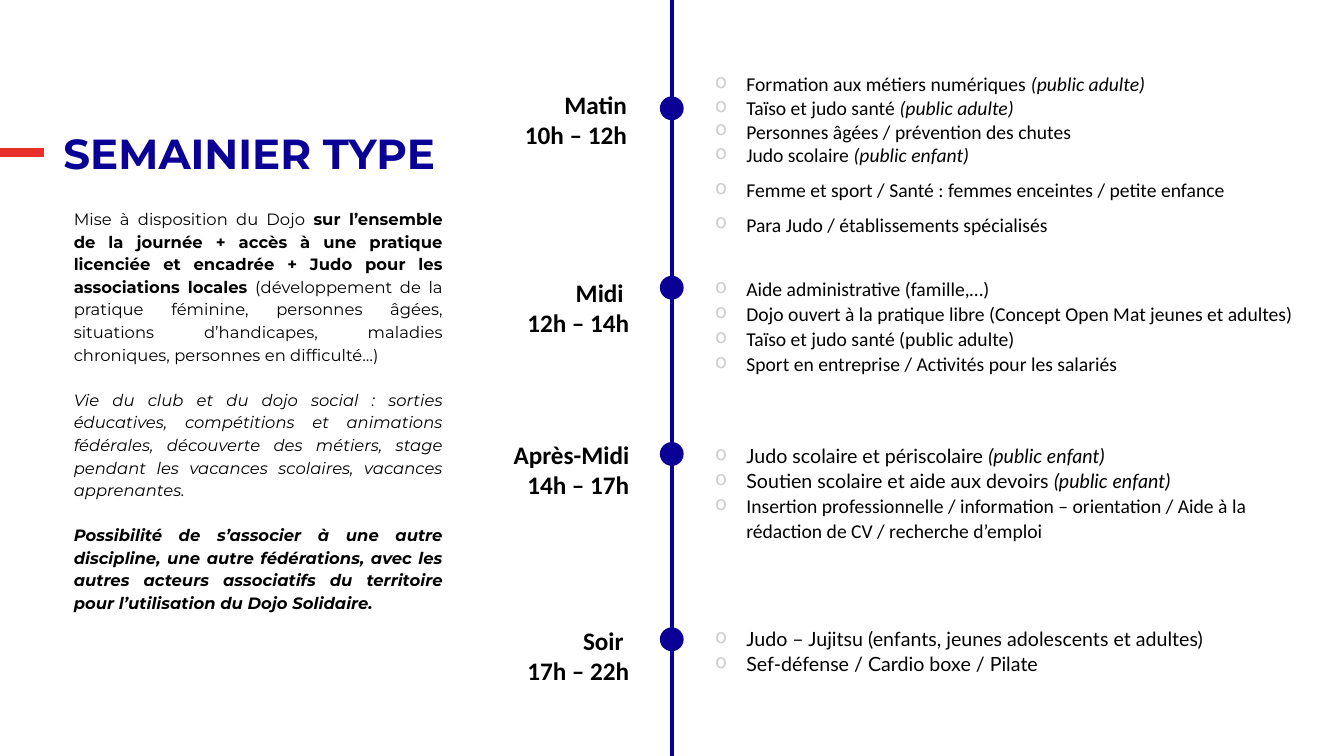
"""Build the weekly schedule slide of the dojo."""
from lxml import etree
from pptx import Presentation
from pptx import util as u
from pptx.dml.color import RGBColor
from pptx.enum import shapes, text
from pptx.oxml.ns import qn

COLORS = {"navy": "0A0096", "red": "E7302A", "ink": "000000", "bullet": "D0CECE"}
AXIS_X = 16.93
DOT_SIZE = 0.6
ADULTS = ("(public adulte)", "i")
CHILDREN = ("(public enfant)", "i")

MOMENTS = [
    {"dot": 2.73, "label": ["Matin", "10h – 12h"], "label_at": (16.05, 2.13),
     "list_top": 1.7, "width": 17.17, "spacing": 1.0, "fonts": ["Calibri"] * 6,
     "gaps": [0, 0, 0, 8, 8, 8],
     "activities": [
         [("Formation aux métiers numériques ", ""), ADULTS],
         [("Taïso et judo santé ", ""), ADULTS],
         [("Personnes âgées / prévention des chutes", "")],
         [("Judo scolaire ", ""), CHILDREN],
         [("Femme et sport / Santé : femmes enceintes / petite enfance", "")],
         [("Para Judo / établissements spécialisés", "")]]},
    {"dot": 7.25, "label": ["Midi ", "12h – 14h"], "label_at": (16.11, 6.86),
     "list_top": 6.81, "width": 17.17, "spacing": 1.07, "fonts": ["Calibri"] * 4,
     "gaps": [0] * 4,
     "activities": [
         [("Aide administrative (famille,…)", "")],
         [("Dojo ouvert à la pratique libre (Concept Open Mat jeunes et adultes)", "")],
         [("Taïso et judo santé (public adulte)", "")],
         [("Sport en entreprise / Activités pour les salariés", "")]]},
    {"dot": 11.44, "label": ["Après-Midi", "14h – 17h"], "label_at": (16.11, 10.95),
     "list_top": 11.02, "width": 15.65, "spacing": 1.07,
     "fonts": ["Lato", "Lato", "Calibri"], "gaps": [0] * 3,
     "activities": [
         [("Judo scolaire et périscolaire ", ""), CHILDREN],
         [("Soutien scolaire et aide aux devoirs ", ""), CHILDREN],
         [("Insertion professionnelle / information – orientation / Aide à la "
           "rédaction de CV / recherche d’emploi", "")]]},
    {"dot": 16.11, "label": ["Soir ", "17h – 22h"], "label_at": (16.11, 15.63),
     "list_top": 15.63, "width": 17.17, "spacing": 1.07, "fonts": ["Lato"] * 2,
     "gaps": [0] * 2,
     "activities": [
         [("Judo – Jujitsu (enfants, jeunes adolescents et adultes)", "")],
         [("Sef-défense / Cardio boxe / Pilate", "")]]},
]

PRESENTATION = [
    [("Mise à disposition du Dojo ", ""),
     ("sur l’ensemble de la journée + accès à une pratique licenciée et encadrée "
      "+ Judo pour les associations locales", "b"),
     (" (développement de la pratique féminine, personnes âgées, situations "
      "d’handicapes, maladies chroniques, personnes en difficulté…)", "")],
    [("Vie du club et du dojo social : sorties éducatives, compétitions et "
      "animations fédérales, découverte des métiers, stage pendant les vacances "
      "scolaires, vacances apprenantes.", "i")],
    [("Possibilité de s’associer à une autre discipline, une autre fédérations, "
      "avec les autres acteurs associatifs du territoire pour l’utilisation du "
      "Dojo Solidaire.", "bi")],
]


def rgb(name):
    return RGBColor.from_string(COLORS[name])


def add_text_area(slide, left, top, width, height, wrap=True):
    frame = slide.shapes.add_textbox(
        u.Cm(left), u.Cm(top), u.Cm(width), u.Cm(height)).text_frame
    frame.word_wrap = wrap
    return frame


def next_paragraph(frame, index):
    return frame.add_paragraph() if index else frame.paragraphs[0]


def write_runs(paragraph, runs, font, size, color="ink"):
    paragraph.font.name = font
    paragraph.font.size = u.Pt(size)
    paragraph.font.color.rgb = rgb(color)
    shared = len({style for _, style in runs}) == 1
    for words, style in runs:
        run = paragraph.add_run()
        run.text = words
        target = paragraph.font if shared else run.font
        target.bold = "b" in style
        target.italic = "i" in style


def set_indent(paragraph, margin, first_line=0):
    properties = paragraph._p.get_or_add_pPr()
    properties.set("marL", str(u.Cm(margin)))
    properties.set("indent", str(u.Cm(first_line)))
    return properties


def set_bullet(paragraph):
    properties = set_indent(paragraph, 0.79, -0.79)
    color = etree.SubElement(properties, qn("a:buClr"))
    etree.SubElement(color, qn("a:srgbClr"), val=COLORS["bullet"])
    etree.SubElement(properties, qn("a:buChar"), char="o")


def add_rule(slide, start, end, color, weight):
    rule = slide.shapes.add_connector(
        shapes.MSO_CONNECTOR.STRAIGHT, *(u.Cm(value) for value in start + end))
    rule.line.color.rgb = rgb(color)
    rule.line.width = u.Pt(weight)
    etree.SubElement(rule._element.spPr, qn("a:effectLst"))


def add_dot(slide, center_y):
    dot = slide.shapes.add_shape(
        shapes.MSO_SHAPE.OVAL, u.Cm(AXIS_X - DOT_SIZE / 2),
        u.Cm(center_y - DOT_SIZE / 2), u.Cm(DOT_SIZE), u.Cm(DOT_SIZE))
    dot.shadow.inherit = False
    dot.fill.solid()
    dot.fill.fore_color.rgb = rgb("navy")
    dot.line.fill.background()


def add_label(slide, lines, right, top):
    width = 3.5
    frame = add_text_area(slide, right - width, top, width, 1.8)
    for index, line in enumerate(lines):
        paragraph = next_paragraph(frame, index)
        paragraph.alignment = text.PP_ALIGN.RIGHT
        write_runs(paragraph, [(line, "b")], "Calibri", 18)


def add_activities(slide, moment):
    activities = moment["activities"]
    frame = add_text_area(slide, 17.77, moment["list_top"], moment["width"],
                          0.65 * len(activities))
    rows = zip(activities, moment["fonts"], moment["gaps"])
    for index, (runs, font, gap) in enumerate(rows):
        paragraph = next_paragraph(frame, index)
        set_bullet(paragraph)
        paragraph.line_spacing = moment["spacing"]
        paragraph.space_after = u.Pt(gap)
        write_runs(paragraph, runs, font, 14)


def add_presentation(slide):
    frame = add_text_area(slide, 1.41, 5.07, 10, 10.5)
    for index, runs in enumerate(PRESENTATION):
        paragraph = next_paragraph(frame, index)
        set_indent(paragraph, 0.2)
        paragraph.alignment = text.PP_ALIGN.JUSTIFY
        paragraph.line_spacing = 1.15
        paragraph.space_after = u.Pt(16)
        write_runs(paragraph, runs, "Montserrat", 11.7)


def main():
    deck = Presentation()
    deck.slide_width, deck.slide_height = u.Cm(33.87), u.Cm(19.05)
    slide = deck.slides.add_slide(deck.slide_layouts[6])
    add_rule(slide, (AXIS_X, 0), (AXIS_X, 19.05), "navy", 2.5)
    title = add_text_area(slide, 1.35, 3.1, 10, 1.55, wrap=False)
    write_runs(title.paragraphs[0], [("SEMAINIER TYPE", "b")],
               "Montserrat", 30, "navy")
    for moment in MOMENTS:
        add_activities(slide, moment)
        add_label(slide, moment["label"], *moment["label_at"])
        add_dot(slide, moment["dot"])
    add_rule(slide, (-0.58, 3.84), (1.12, 3.84), "red", 6)
    add_presentation(slide)
    deck.save("out.pptx")


if __name__ == "__main__":
    main()
